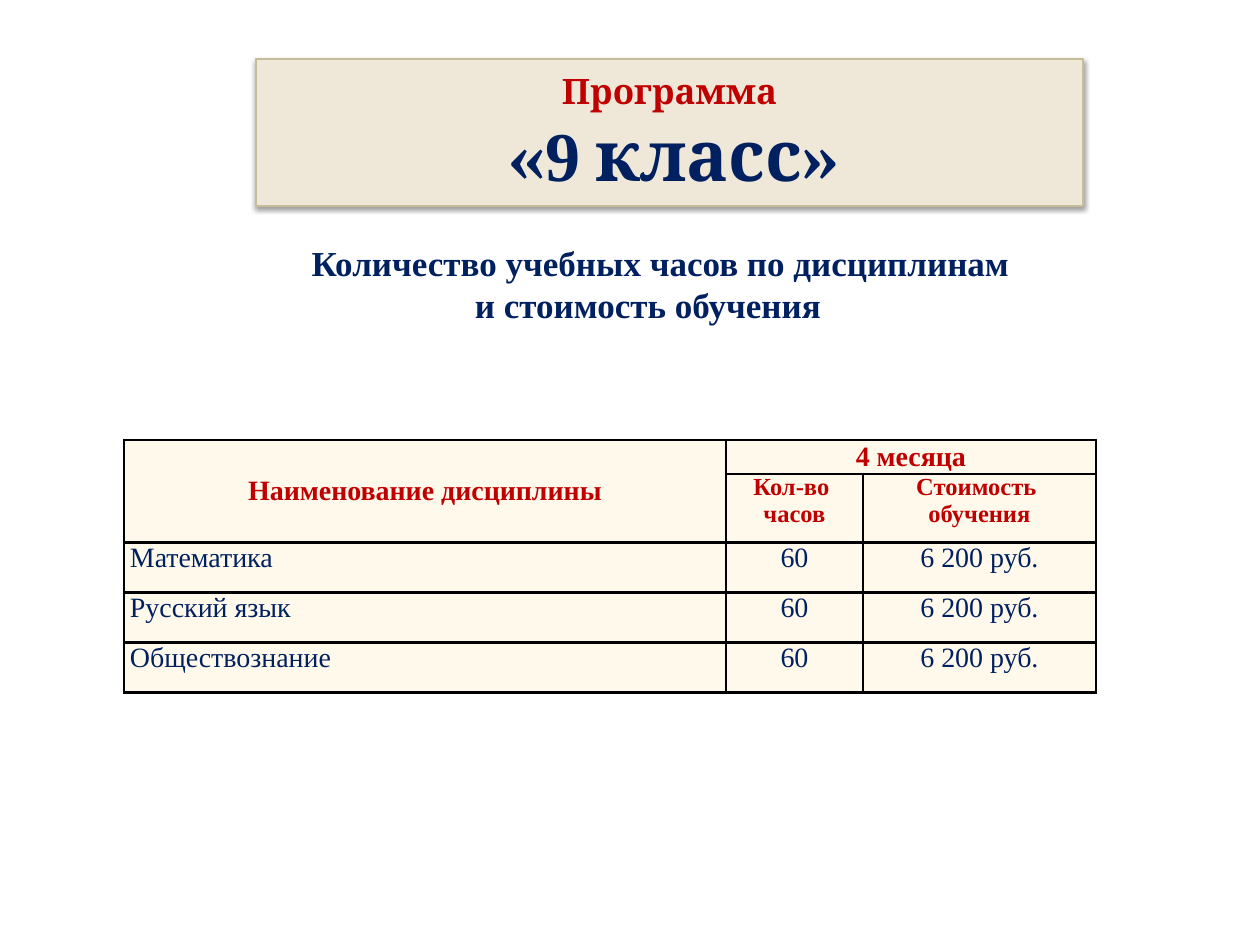
"""Build the course price slide for the ninth grade programme."""
from dataclasses import dataclass

from lxml import etree
from pptx import Presentation, util as u
from pptx.dml.color import RGBColor
from pptx.enum import shapes, text
from pptx.oxml import ns

SCALE = 914400 / 126
MID = text.MSO_ANCHOR.MIDDLE
TOP = text.MSO_ANCHOR.TOP
MARGINS = ("margin_left", "margin_top", "margin_right", "margin_bottom")


@dataclass(frozen=True)
class Theme:
    red: str = "C00000"
    navy: str = "002060"
    sand: str = "EFE8D9"
    edge: str = "C4BD97"
    cream: str = "FFF9EB"
    black: str = "000000"
    serif: str = "Times New Roman"
    head: str = "Cambria"
    small: int = 14
    body: int = 16
    large: int = 20
    huge: int = 40


T = Theme()


@dataclass(frozen=True)
class Run:
    words: str
    size: int
    color: str
    face: str = T.serif
    bold: bool = True


@dataclass(frozen=True)
class Line:
    runs: tuple[Run, ...]
    left: bool = False
    shift: int = 0


@dataclass(frozen=True)
class Cell:
    row: int
    col: int
    lines: tuple[Line, ...]
    anchor: text.MSO_ANCHOR = TOP
    tall: int = 1
    wide: int = 1


def px(size: int) -> int:
    return round(size * SCALE)


def rgb(color: str) -> RGBColor:
    return RGBColor.from_string(color)


def apply(item: object, form: dict) -> None:
    for name, value in form.items():
        setattr(item, name, value)


def write(frame, lines: tuple[Line, ...]) -> None:
    for num, line in enumerate(lines):
        para = frame.add_paragraph() if num else frame.paragraphs[0]
        para.alignment = text.PP_ALIGN.LEFT if line.left else text.PP_ALIGN.CENTER
        if line.shift:
            para._p.get_or_add_pPr().set("marL", str(px(line.shift)))
        for part in line.runs:
            run = para.add_run()
            run.text = part.words
            apply(run.font, {"size": u.Pt(part.size), "name": part.face, "bold": part.bold})
            run.font.color.rgb = rgb(part.color)


def shade(shape) -> None:
    shape.shadow.inherit = False
    glow = shape._element.spPr.find(ns.qn("a:effectLst"))
    drop = etree.SubElement(glow, ns.qn("a:outerShdw"), blurRad=str(u.Pt(3.1)),
                            dist=str(u.Pt(1.6)), dir="5400000", rotWithShape="0")
    tint = etree.SubElement(drop, ns.qn("a:srgbClr"), val=T.black)
    etree.SubElement(tint, ns.qn("a:alpha"), val="38000")


def frame_cell(cell) -> None:
    props = cell._tc.get_or_add_tcPr()
    for side in ("lnL", "lnR", "lnT", "lnB"):
        edge = etree.SubElement(props, ns.qn(f"a:{side}"), w=str(u.Pt(1.5)))
        fill = etree.SubElement(edge, ns.qn("a:solidFill"))
        etree.SubElement(fill, ns.qn("a:srgbClr"), val=T.black)
    cell.fill.solid()
    cell.fill.fore_color.rgb = rgb(T.cream)
    apply(cell, dict(zip(MARGINS, (px(6), 0, px(6), 0))))


def add_title(slide) -> None:
    box = slide.shapes.add_shape(shapes.MSO_SHAPE.RECTANGLE, *map(px, (256, 59, 827, 147)))
    box.fill.solid()
    box.fill.fore_color.rgb = rgb(T.sand)
    box.line.color.rgb = rgb(T.edge)
    box.line.width = u.Pt(0.75)
    shade(box)
    apply(box.text_frame, {"word_wrap": True, "vertical_anchor": MID} | dict.fromkeys(MARGINS, 0))
    write(box.text_frame, (
        Line((Run("Программа", T.large, T.red, T.head),)),
        Line((Run("«", T.huge, T.navy, T.head), Run("9", T.huge, T.navy),
              Run(" класс»", T.huge, T.navy, T.head)), shift=8),
    ))


def add_note(slide) -> None:
    box = slide.shapes.add_textbox(*map(px, (95, 217, 1106, 450)))
    apply(box.text_frame, {"word_wrap": True, "margin_top": px(24)})
    write(box.text_frame, (
        Line((Run("Количество учебных часов по дисциплинам", T.large, T.navy),), shift=25),
        Line((Run("и стоимость обучения", T.large, T.navy),)),
    ))


def head(*words: str, size: int = T.body) -> tuple[Line, ...]:
    return tuple(Line((Run(word, size, T.red),)) for word in words)


def add_table(slide) -> None:
    names = ("Математика", "Русский язык", "Обществознание")
    cols, rows = (602, 137, 233), (33, 69) + (50,) * len(names)
    table = slide.shapes.add_table(len(rows), len(cols), *map(
        px, (124, 440, sum(cols), sum(rows)))).table
    apply(table, {"first_row": False, "horz_banding": False})
    for col, size in zip(table.columns, cols):
        col.width = px(size)
    for row, size in zip(table.rows, rows):
        row.height = px(size)
    for cell in table.iter_cells():
        frame_cell(cell)
    cells = [
        Cell(0, 0, head("Наименование дисциплины"), MID, tall=2),
        Cell(0, 1, head("4 месяца"), MID, wide=2),
        Cell(1, 1, head("Кол-во ", "часов", size=T.small)),
        Cell(1, 2, head("Стоимость ", "обучения", size=T.small)),
    ]
    for row, name in enumerate(names, 2):
        for col, word in enumerate((name, "60", "6 200 руб.")):
            run = Run(word, T.body, T.navy, bold=False)
            cells.append(Cell(row, col, (Line((run,), left=col == 0),)))
    for item in cells:
        cell = table.cell(item.row, item.col)
        if item.tall * item.wide > 1:
            cell.merge(table.cell(item.row + item.tall - 1, item.col + item.wide - 1))
        cell.vertical_anchor = item.anchor
        write(cell.text_frame, item.lines)


def main() -> None:
    deck = Presentation()
    apply(deck, {"slide_width": px(1260), "slide_height": px(945)})
    slide = deck.slides.add_slide(deck.slide_layouts[6])
    add_title(slide)
    add_note(slide)
    add_table(slide)
    deck.save("out.pptx")


if __name__ == "__main__":
    main()
